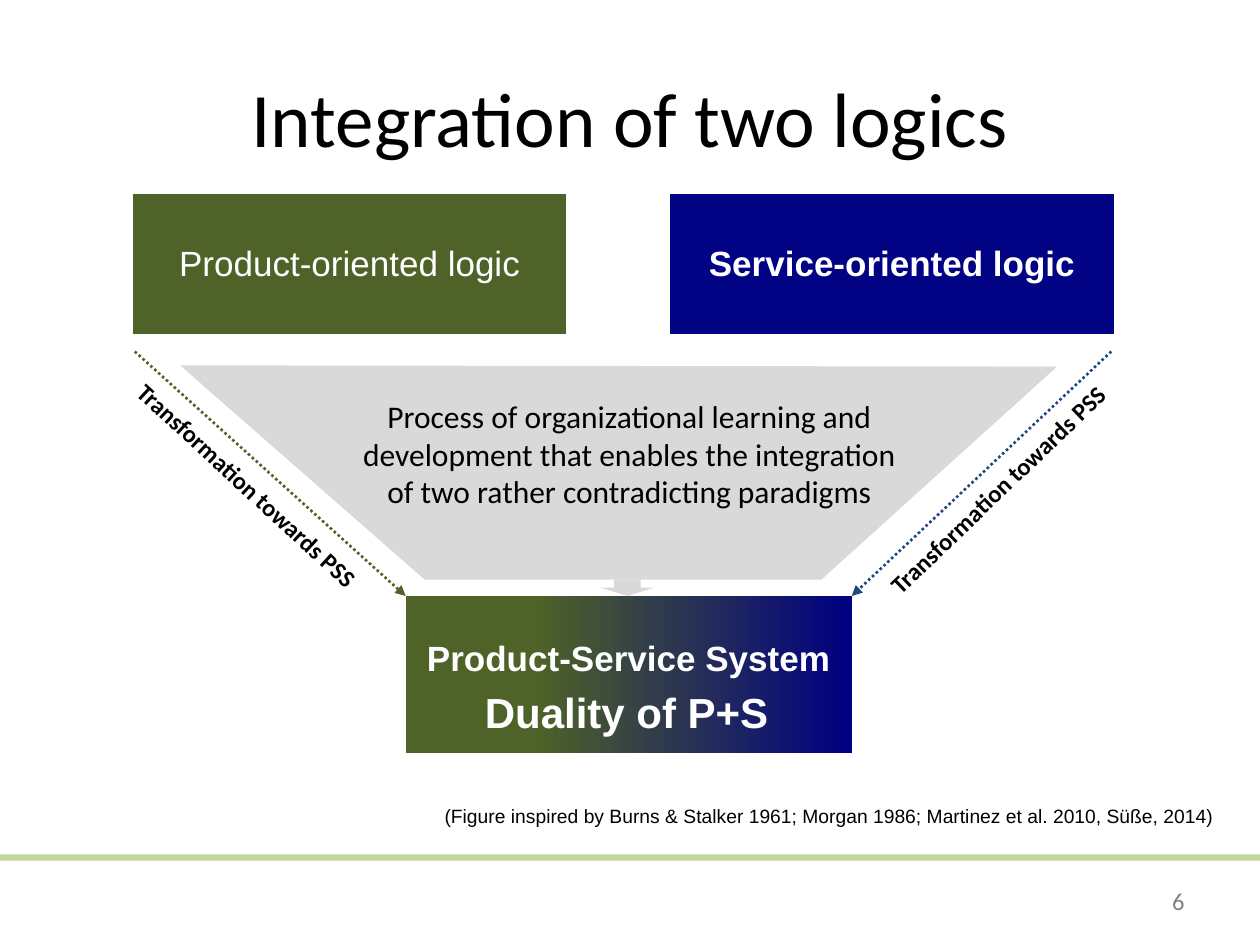
"""Build the slide on integrating product-oriented and service-oriented logic."""
from lxml import etree
from pptx import Presentation
from pptx.dml.color import RGBColor
from pptx.enum.dml import MSO_LINE
from pptx.enum.shapes import MSO_CONNECTOR, MSO_SHAPE
from pptx.enum.text import MSO_ANCHOR, PP_ALIGN
from pptx.oxml import parse_xml
from pptx.oxml.ns import nsdecls, qn
from pptx.util import Inches, Pt

BLACK = RGBColor(0x00, 0x00, 0x00)
WHITE = RGBColor(0xFF, 0xFF, 0xFF)
GREY = RGBColor(0x80, 0x80, 0x80)
LIGHT_GREY = RGBColor(0xD9, 0xD9, 0xD9)
LIGHT_GREEN = RGBColor(0xC3, 0xD6, 0x9B)
GREEN = RGBColor(0x4F, 0x62, 0x28)
NAVY = RGBColor(0x02, 0x02, 0x84)
DEEP_BLUE = RGBColor(0x00, 0x00, 0x82)
BLUE = RGBColor(0x1F, 0x49, 0x7D)


def write(text_frame, text, size, font="Calibri", color=BLACK, bold=False,
          align=PP_ALIGN.LEFT, anchor=MSO_ANCHOR.TOP, wrap=True):
    text_frame.text = text
    text_frame.word_wrap = wrap
    text_frame.vertical_anchor = anchor
    paragraph = text_frame.paragraphs[0]
    paragraph.alignment = align
    run_font = paragraph.runs[0].font
    run_font.name, run_font.size, run_font.bold = font, Pt(size), bold
    run_font.color.rgb = color


def add_text(left, top, width, height, text, size, **style):
    box = slide.shapes.add_textbox(Inches(left), Inches(top), Inches(width), Inches(height))
    write(box.text_frame, text, size, **style)
    return box


presentation = Presentation()
presentation.slide_width, presentation.slide_height = Inches(10), Inches(7.5)
slide = presentation.slides.add_slide(presentation.slide_layouts[6])

footer_line = slide.shapes.add_shape(
    MSO_SHAPE.RECTANGLE, Inches(0), Inches(6.78), Inches(10), Inches(0.05))
footer_line.shadow.inherit = False
footer_line.fill.solid()
footer_line.fill.fore_color.rgb = LIGHT_GREEN
footer_line.line.fill.background()

add_text(0.5, 0.3, 9, 1.25, "Integration of two logics", 44,
         align=PP_ALIGN.CENTER, anchor=MSO_ANCHOR.MIDDLE)
add_text(7.17, 6.95, 2.33, 0.4, "6", 14, color=GREY,
         align=PP_ALIGN.RIGHT, anchor=MSO_ANCHOR.MIDDLE)
add_text(3.43, 6.33, 6.37, 0.29,
         "(Figure inspired by Burns & Stalker 1961; Morgan 1986; "
         "Martinez et al. 2010, Süße, 2014)", 11, font="Arial", wrap=False)

for left, width, text, color, bold in (
    (1.05, 3.45, "Product-oriented logic", GREEN, False),
    (5.31, 3.54, "Service-oriented logic", NAVY, True),
):
    table = slide.shapes.add_table(
        1, 1, Inches(left), Inches(1.53), Inches(width), Inches(1.14)).table
    table.first_row = table.horz_banding = False
    cell = table.cell(0, 0)
    write(cell.text_frame, text, 20, font="Arial", color=WHITE, bold=bold,
          align=PP_ALIGN.CENTER)
    cell.vertical_anchor = MSO_ANCHOR.MIDDLE
    cell_properties = cell._tc.get_or_add_tcPr()
    for side, points in (("L", 1), ("R", 1), ("T", 1), ("B", 3)):
        cell_properties.append(parse_xml(
            f'<a:ln{side} {nsdecls("a")} w="{Pt(points)}"><a:solidFill>'
            f'<a:srgbClr val="{WHITE}"/></a:solidFill></a:ln{side}>'))
    cell.fill.solid()
    cell.fill.fore_color.rgb = color

system = slide.shapes.add_shape(
    MSO_SHAPE.RECTANGLE, Inches(3.22), Inches(4.73), Inches(3.54), Inches(1.25))
system.shadow.inherit = False
system.line.fill.background()
system.fill.gradient()
system.fill.gradient_angle = 0
for stop, position, color in zip(system.fill.gradient_stops, (0.29, 1), (GREEN, DEEP_BLUE)):
    stop.position = position
    stop.color.rgb = color
write(system.text_frame, "Product-Service System", 20, font="Arial", color=WHITE,
      bold=True, align=PP_ALIGN.CENTER)
system.text_frame.margin_top = Inches(0.32)

for left, top, rotation, start_x, end_x, color in (
    (0.72, 3.69, 42.7, 1.07, 3.22, GREEN),
    (6.68, 3.71, 316.1, 8.82, 6.76, BLUE),
):
    label = add_text(left, top, 2.49, 0.34, "Transformation towards PSS", 14,
                     bold=True, wrap=False)
    label.rotation = rotation
    arrow = slide.shapes.add_connector(
        MSO_CONNECTOR.STRAIGHT, Inches(start_x), Inches(2.79), Inches(end_x), Inches(4.73))
    arrow.line.color.rgb = color
    arrow.line.width = Pt(1.5)
    arrow.line.dash_style = MSO_LINE.ROUND_DOT
    etree.SubElement(arrow.line._get_or_add_ln(), qn("a:tailEnd"), type="triangle")
    etree.SubElement(arrow._element.spPr, qn("a:effectLst"))

builder = slide.shapes.build_freeform(Inches(1.43), Inches(2.9))
builder.add_line_segments(
    [(Inches(x), Inches(y)) for x, y in ((3.37, 4.6), (6.52, 4.6), (8.39, 2.91))])
funnel = builder.convert_to_shape()
down_arrow = slide.shapes.add_shape(
    MSO_SHAPE.DOWN_ARROW, Inches(4.77), Inches(4.6), Inches(0.42), Inches(0.13))
for shape in (funnel, down_arrow):
    shape.shadow.inherit = False
    shape.fill.solid()
    shape.fill.fore_color.rgb = LIGHT_GREY
    shape.line.fill.background()

add_text(2.67, 3.1, 4.65, 1.01,
         "Process of organizational learning and development that enables "
         "the integration of two rather contradicting paradigms", 18,
         align=PP_ALIGN.CENTER)
add_text(3.75, 5.4, 2.47, 0.5, "Duality of P+S", 24, font="Arial", color=WHITE,
         bold=True, wrap=False)

presentation.save("out.pptx")
